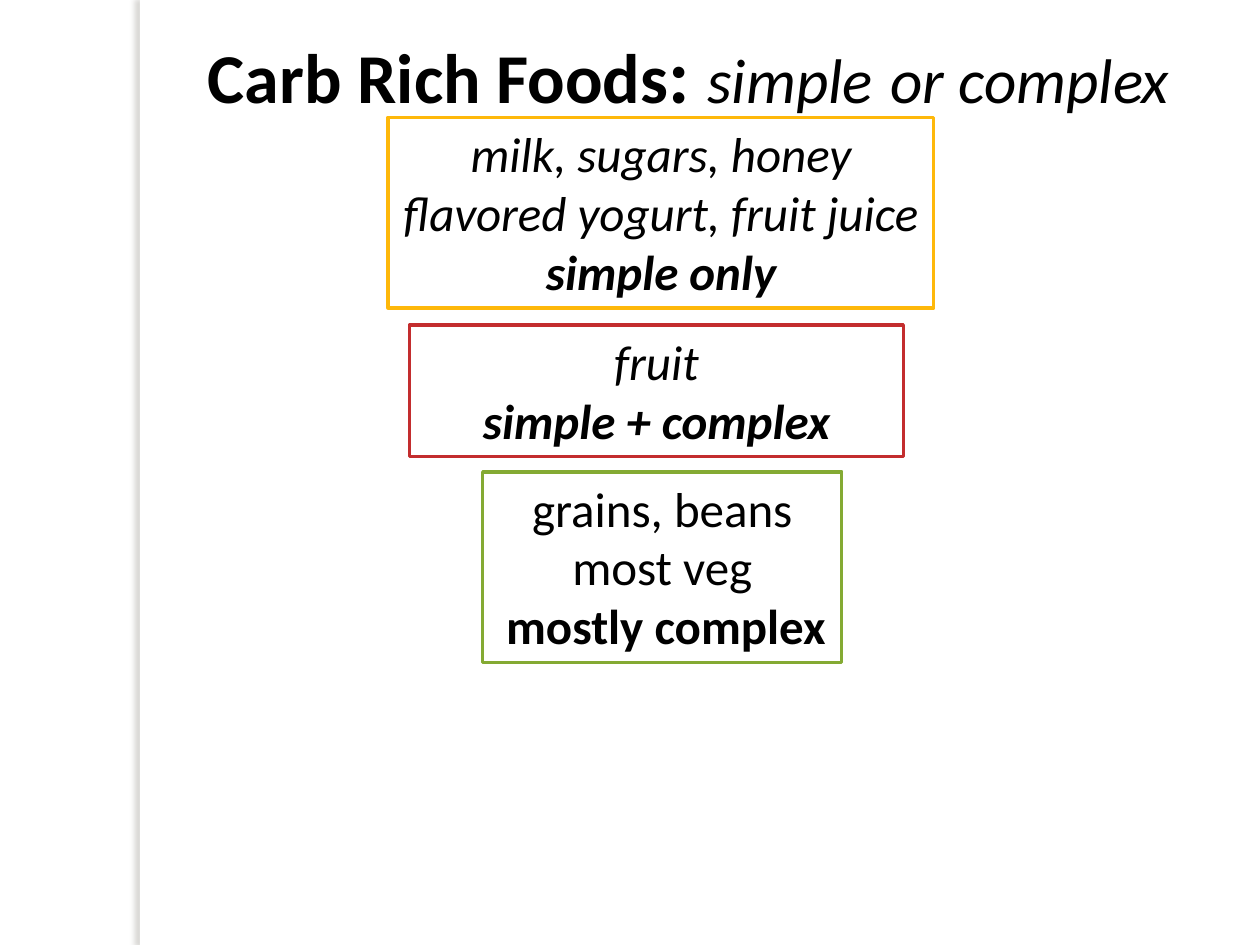
"""Build the slide that sorts carb rich foods into simple and complex."""
from lxml import etree
from pptx import Presentation
from pptx.dml.color import RGBColor
from pptx.enum.shapes import MSO_SHAPE
from pptx.enum.text import MSO_ANCHOR, MSO_AUTO_SIZE, PP_ALIGN
from pptx.oxml.ns import qn
from pptx.util import Pt

BLACK = RGBColor(0x00, 0x00, 0x00)
WHITE = RGBColor(0xFF, 0xFF, 0xFF)
SHADOW = RGBColor(0x70, 0x6B, 0x5F)
AMBER = RGBColor(0xFE, 0xB8, 0x0A)
RED = RGBColor(0xC3, 0x2D, 0x2E)
GREEN = RGBColor(0x84, 0xAA, 0x33)


def add_run(p, text, size, bold, italic):
    r = p.add_run()
    r.text = text
    r.font.name = "Calibri"
    r.font.size = Pt(size)
    r.font.bold = bold
    r.font.italic = italic
    r.font.color.rgb = BLACK


prs = Presentation()
prs.slide_width, prs.slide_height = Pt(720), Pt(540)
s = prs.slides.add_slide(prs.slide_layouts[6])
s.background.fill.solid()
s.background.fill.fore_color.rgb = WHITE

bar = s.shapes.add_shape(MSO_SHAPE.RECTANGLE, Pt(79.9), 0, Pt(5.8), Pt(540))
bar.fill.solid()
bar.fill.fore_color.rgb = WHITE
bar.line.fill.background()
bar.shadow.inherit = False
effects = bar.element.spPr.find(qn("a:effectLst"))
shadow = etree.SubElement(effects, qn("a:outerShdw"), blurRad=str(Pt(3)), dist=str(Pt(3)),
                          dir="10800000", algn="tl", rotWithShape="0")
color = etree.SubElement(shadow, qn("a:srgbClr"), val=str(SHADOW))
etree.SubElement(color, qn("a:alpha"), val="25000")

title = s.shapes.add_textbox(Pt(93.6), Pt(14.4), Pt(599.8), Pt(41.8))
tf = title.text_frame
tf.word_wrap = True
tf.vertical_anchor = MSO_ANCHOR.TOP
tf.margin_top = Pt(1)
tf.margin_bottom = 0
p = tf.paragraphs[0]
p.alignment = PP_ALIGN.CENTER
for text, size, bold, italic in [
    ("Carb Rich Foods", 40, True, False),
    (": ", 44, True, False),
    ("simple", 36, False, True),
    (" ", 44, False, True),
    ("or complex", 36, False, True),
]:
    add_run(p, text, size, bold, italic)

C, L = PP_ALIGN.CENTER, PP_ALIGN.LEFT
groups = [
    (221.8, 67, 311.8, 109, AMBER, True,
     [("milk, sugars, honey", C), ("flavored yogurt, fruit juice", C), ("simple only", C)]),
    (234, 185.8, 282.2, 75, RED, True,
     [("fruit", C), ("simple + complex", C)]),
    (275.8, 269.6, 205.2, 109, GREEN, False,
     [("grains, beans", C), ("most veg", C), (" mostly complex", L)]),
]
for left, top, width, height, outline, italic, lines in groups:
    sp = s.shapes.add_textbox(Pt(left), Pt(top), Pt(width), Pt(height))
    sp.fill.solid()
    sp.fill.fore_color.rgb = WHITE
    sp.line.color.rgb = outline
    sp.line.width = Pt(2)
    tf = sp.text_frame
    tf.word_wrap = True
    tf.auto_size = MSO_AUTO_SIZE.SHAPE_TO_FIT_TEXT
    for i, (text, align) in enumerate(lines):
        p = tf.add_paragraph() if i else tf.paragraphs[0]
        p.alignment = align
        add_run(p, text, 28, i == len(lines) - 1, italic)

prs.save("out.pptx")
